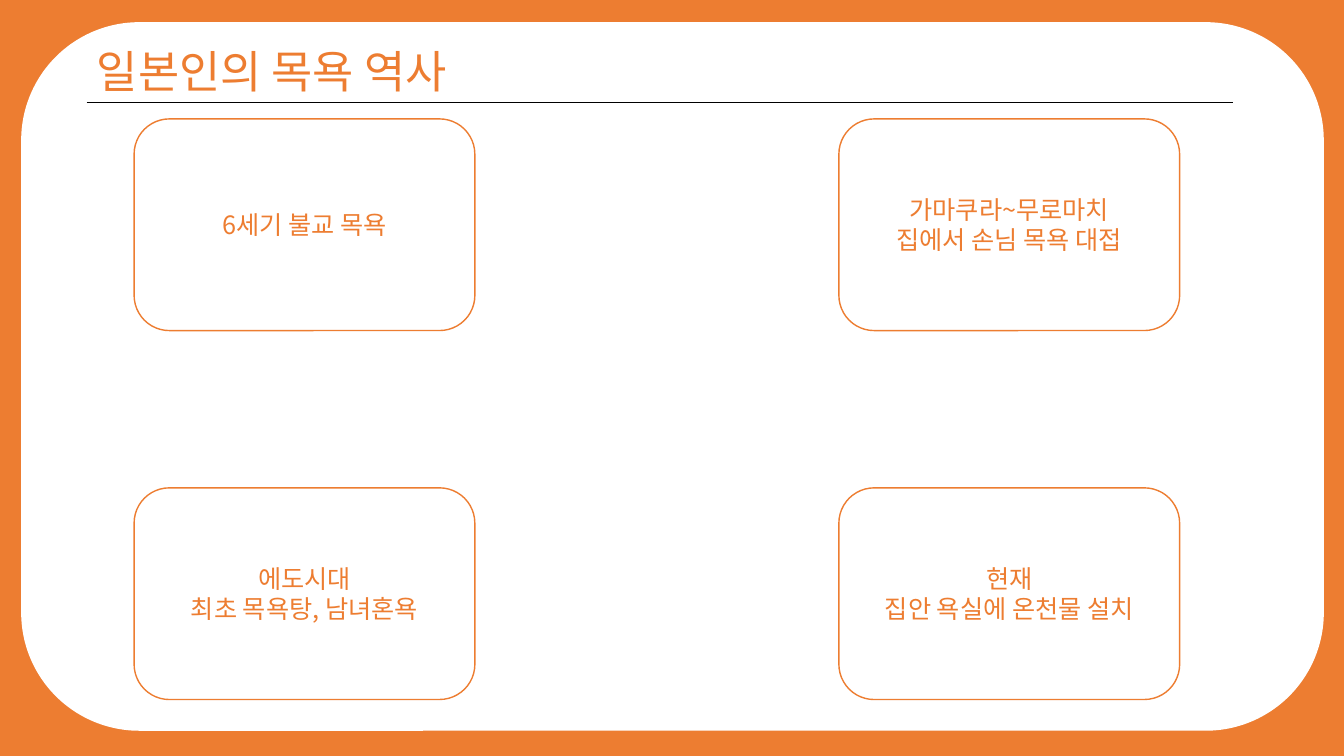
from pptx import Presentation
from pptx.dml.color import RGBColor
from pptx.enum import shapes, text
from pptx.oxml.ns import qn
from pptx.util import Inches, Pt

COLORS = {"orange": "ED7D31", "white": "FFFFFF", "black": "000000"}
FONT = "Noto Sans CJK KR"

CARD_LEFTS = (1.33, 8.32)
CARD_TOPS = (1.18, 4.84)
CARD_SIZE = (3.38, 2.1)
ERAS = [
    ["6세기 불교 목욕"],
    ["가마쿠라~무로마치", "집에서 손님 목욕 대접"],
    ["에도시대", "최초 목욕탕, 남녀혼욕"],
    ["현재", "집안 욕실에 온천물 설치"],
]


def color(name):
    return RGBColor.from_string(COLORS[name])


def write_text(shape, lines, size, align, anchor):
    """Fill a shape with one paragraph per line."""
    frame = shape.text_frame
    frame.word_wrap = True
    frame.auto_size = text.MSO_AUTO_SIZE.NONE
    frame.vertical_anchor = anchor
    for index, line in enumerate(lines):
        para = frame.add_paragraph() if index else frame.paragraphs[0]
        para.alignment = align
        span = para.add_run()
        span.text = line
        span.font.name = FONT
        span.font.size = Pt(size)
        span.font.color.rgb = color("orange")
        # Korean glyphs take the East Asian typeface
        east_asian = span.font._element.makeelement(qn("a:ea"), {"typeface": FONT})
        span.font._element.find(qn("a:latin")).addnext(east_asian)


def add_rounded_box(page, left, top, width, height, line=None):
    box = page.shapes.add_shape(
        shapes.MSO_SHAPE.ROUNDED_RECTANGLE,
        Inches(left), Inches(top), Inches(width), Inches(height))
    box.shadow.inherit = False
    box.fill.solid()
    box.fill.fore_color.rgb = color("white")
    if line:
        box.line.color.rgb = color(line)
        box.line.width = Pt(1)
    else:
        box.line.fill.background()
    return box


def add_rule(page, left, right, top):
    rule = page.shapes.add_connector(
        shapes.MSO_CONNECTOR.STRAIGHT,
        Inches(left), Inches(top), Inches(right), Inches(top))
    rule.line.color.rgb = color("black")
    rule.line.width = Pt(0.5)
    properties = rule._element.spPr
    properties.append(properties.makeelement(qn("a:effectLst"), {}))


def place_title(page, words):
    title = page.shapes.title
    title.left, title.top = Inches(0.86), Inches(0.38)
    title.width, title.height = Inches(7.07), Inches(0.64)
    write_text(title, [words], size=32, align=text.PP_ALIGN.LEFT,
               anchor=text.MSO_ANCHOR.TOP)
    # Bring the title in front of the white panel
    title._element.getparent().append(title._element)


def main():
    deck = Presentation()
    deck.slide_width, deck.slide_height = Inches(13.33), Inches(7.5)
    page = deck.slides.add_slide(deck.slide_layouts.get_by_name("Title Only"))

    # Orange frame around a white panel
    page.background.fill.solid()
    page.background.fill.fore_color.rgb = color("orange")
    add_rounded_box(page, 0.21, 0.22, 12.92, 7.03)

    # Heading
    add_rule(page, 0.86, 12.23, 1.02)
    place_title(page, "일본인의 목욕 역사")

    # Eras, two by two
    corners = [(left, top) for top in CARD_TOPS for left in CARD_LEFTS]
    for (left, top), lines in zip(corners, ERAS):
        card = add_rounded_box(page, left, top, *CARD_SIZE, line="orange")
        write_text(card, lines, size=18, align=text.PP_ALIGN.CENTER,
                   anchor=text.MSO_ANCHOR.MIDDLE)

    deck.save("out.pptx")


if __name__ == "__main__":
    main()
